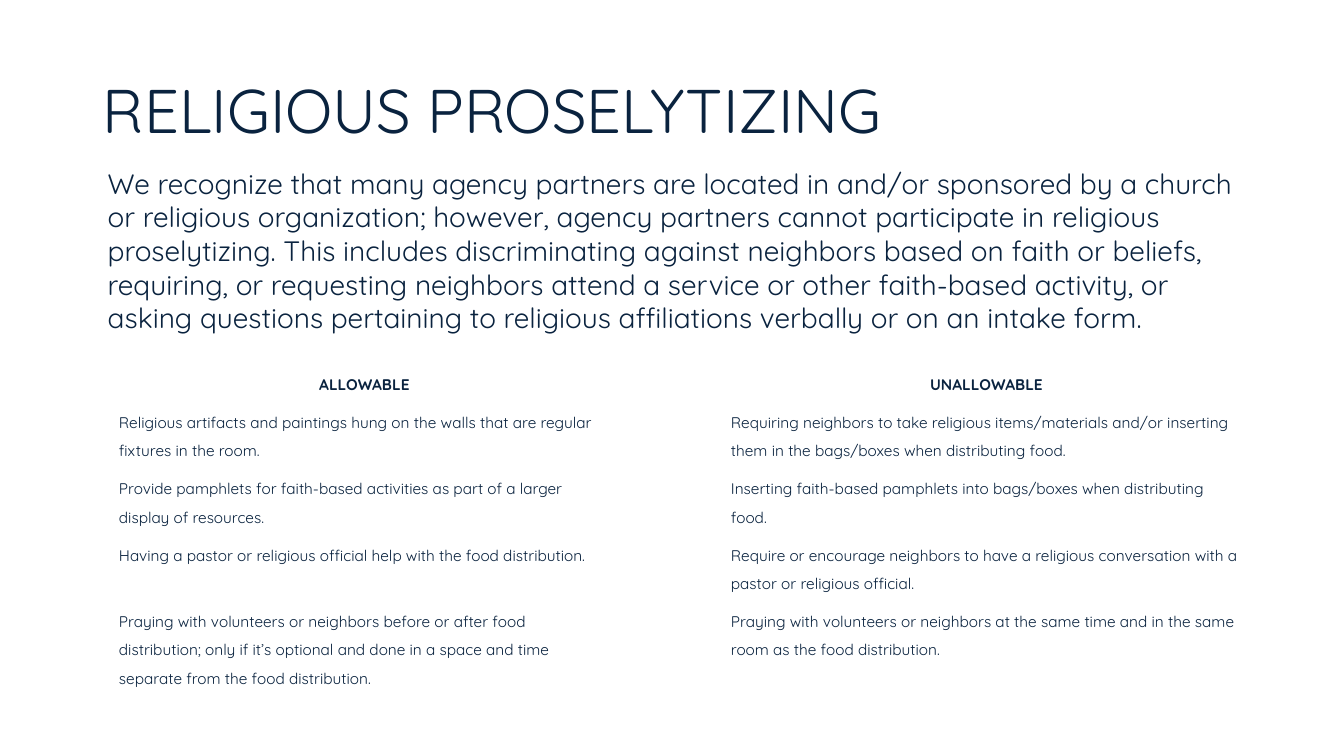
import dataclasses

import pptx
import pptx.dml.color
import pptx.enum.text
import pptx.util

Inches = pptx.util.Inches
Pt = pptx.util.Pt
ALIGN = pptx.enum.text.PP_ALIGN


@dataclasses.dataclass(frozen=True)
class Theme:
    font: str = "Quicksand"
    navy: str = "0A233F"
    title: int = 44
    intro: int = 20
    table: int = 11


THEME = Theme()

TITLE = "RELIGIOUS PROSELYTIZING"
INTRO = (
    "We recognize that many agency partners are located in and/or sponsored by a church "
    "or religious organization; however, agency partners cannot participate in religious "
    "proselytizing. This includes discriminating against neighbors based on faith or beliefs, "
    "requiring, or requesting neighbors attend a service or other faith-based activity, or "
    "asking questions pertaining to religious affiliations verbally or on an intake form."
)
RULES = [
    ("ALLOWABLE", "UNALLOWABLE"),
    ("Religious artifacts and paintings hung on the walls that are regular fixtures in the room.",
     "Requiring neighbors to take religious items/materials "
     "and/or inserting them in the bags/boxes when distributing food."),
    ("Provide pamphlets for faith-based activities as part of a larger display of resources.",
     "Inserting faith-based pamphlets into bags/boxes when distributing food."),
    ("Having a pastor or religious official help with the food distribution.",
     "Require or encourage neighbors to have a religious conversation with a pastor "
     "or religious official."),
    ("Praying with volunteers or neighbors before or after food distribution; only if it’s "
     "optional and done in a space and time separate from the food distribution.",
     "Praying with volunteers or neighbors at the same time and in the same room "
     "as the food distribution."),
]
COLUMN_WIDTHS = (5.07, 1, 5.27)
ROW_HEIGHTS = (0.32, 0.52, 0.52, 0.52, 0.75)


def write(frame, text, size, bold=False, **para_format):
    para = frame.paragraphs[0]
    for name, value in para_format.items():
        setattr(para, name, value)
    span = para.add_run()
    span.text = text
    for name, value in {"name": THEME.font, "size": Pt(size), "bold": bold}.items():
        setattr(span.font, name, value)
    span.font.color.rgb = pptx.dml.color.RGBColor.from_string(THEME.navy)


def place_title(page, left, top, width, height):
    title = page.shapes.title
    box = {"left": left, "top": top, "width": width, "height": height}
    for name, value in box.items():
        setattr(title, name, Inches(value))
    title.text_frame.vertical_anchor = pptx.enum.text.MSO_ANCHOR.MIDDLE
    write(title.text_frame, TITLE, THEME.title, alignment=ALIGN.LEFT, line_spacing=0.9)


def add_intro(page, left, top, width, height):
    box = page.shapes.add_textbox(*map(Inches, (left, top, width, height)))
    box.text_frame.word_wrap = True
    box.text_frame.auto_size = pptx.enum.text.MSO_AUTO_SIZE.SHAPE_TO_FIT_TEXT
    write(box.text_frame, INTRO, THEME.intro)


def add_rules_table(page, left, top, width, height):
    """Allowable and unallowable columns, parted by an empty one."""
    shape = page.shapes.add_table(len(ROW_HEIGHTS), len(COLUMN_WIDTHS),
                                  *map(Inches, (left, top, width, height)))
    table = shape.table
    table.first_row = table.horz_banding = False
    for column, size in zip(table.columns, COLUMN_WIDTHS):
        column.width = Inches(size)
    for row, size in zip(table.rows, ROW_HEIGHTS):
        row.height = Inches(size)
    for cell in table.iter_cells():
        cell.fill.background()
    for index, (allowed, barred) in enumerate(RULES):
        heading = index == 0
        for column, text in ((0, allowed), (2, barred)):
            write(table.cell(index, column).text_frame, text, THEME.table, bold=heading,
                  alignment=ALIGN.CENTER if heading else ALIGN.LEFT,
                  line_spacing=Pt(23.1 if heading else 20.1))


def main():
    deck = pptx.Presentation()
    deck.slide_width = Inches(13.33)
    deck.slide_height = Inches(7.5)
    page = deck.slides.add_slide(deck.slide_layouts.get_by_name("Title Only"))
    place_title(page, 0.92, 0.4, 11.5, 1.45)
    add_intro(page, 0.97, 1.6, 11.39, 1.78)
    add_rules_table(page, 1.08, 3.54, sum(COLUMN_WIDTHS), sum(ROW_HEIGHTS))
    deck.save("out.pptx")


if __name__ == "__main__":
    main()
